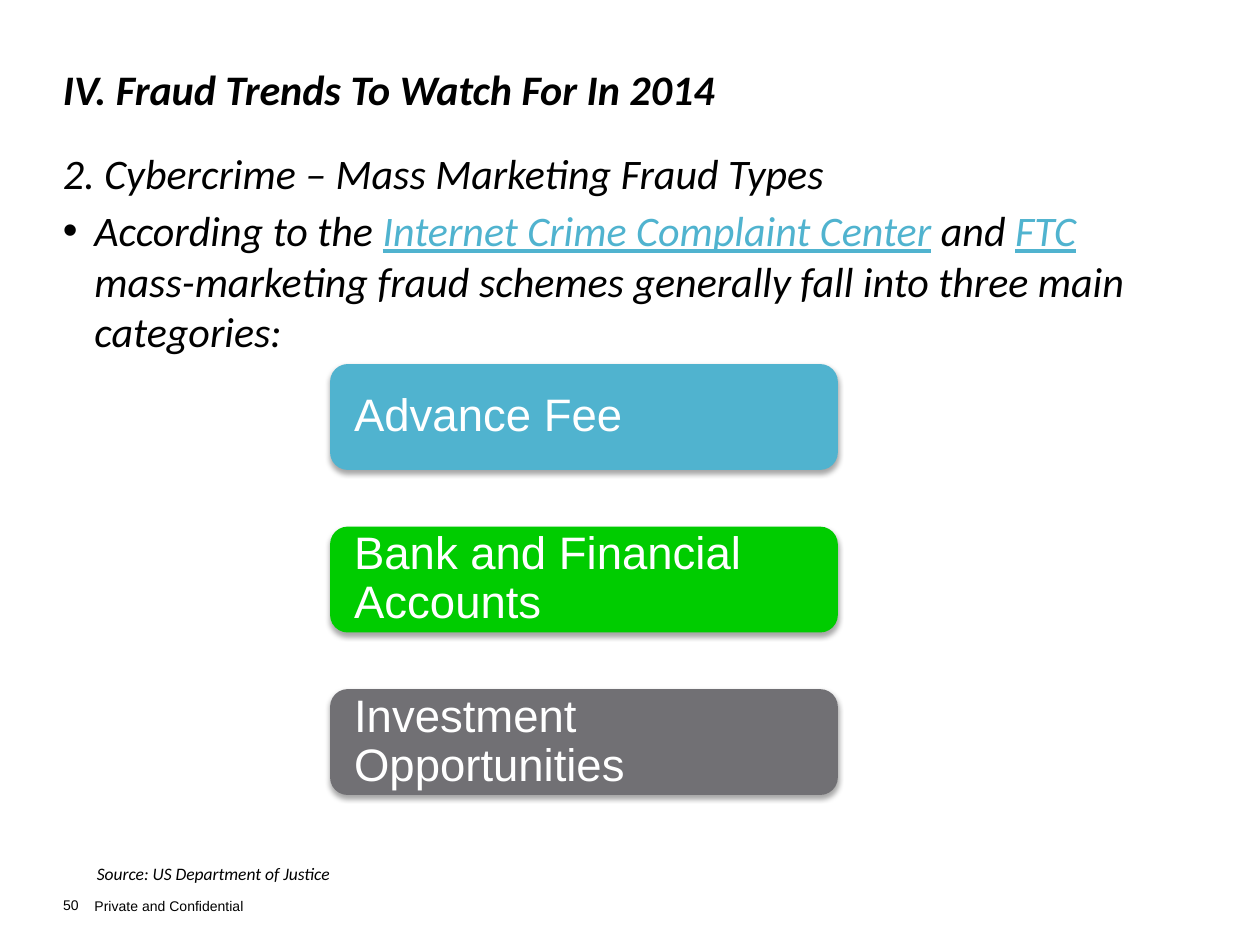
from dataclasses import dataclass, field

from lxml import etree
from pptx import Presentation
from pptx.dml.color import RGBColor
from pptx.enum.shapes import MSO_SHAPE
from pptx.enum.text import MSO_ANCHOR, PP_ALIGN
from pptx.oxml.ns import qn
from pptx.util import Emu, Inches, Pt

BLACK = RGBColor(0x00, 0x00, 0x00)
WHITE = RGBColor(0xFF, 0xFF, 0xFF)
TEAL = RGBColor(0x50, 0xB3, 0xCF)
GREEN = RGBColor(0x00, 0xCC, 0x00)
GRAY = RGBColor(0x71, 0x70, 0x74)

ROUNDED = MSO_SHAPE.ROUNDED_RECTANGLE
TOP, MIDDLE, BOTTOM = MSO_ANCHOR.TOP, MSO_ANCHOR.MIDDLE, MSO_ANCHOR.BOTTOM
LEFT = PP_ALIGN.LEFT

SLIDE_WIDTH, SLIDE_HEIGHT = Inches(10), Inches(7.5)
HEADING = {"name": "Calibri", "size": Pt(24), "bold": True, "italic": True}
BODY = {"name": "Calibri", "size": Pt(24), "italic": True}
SOURCE = {"name": "Calibri", "size": Pt(10), "italic": True}
FOOTER = {"name": "Arial", "size": Pt(8)}
CARD = {"name": "Arial", "size": Pt(26)}
FIRST_CARD_TOP, CARD_STEP = 38.53, 17.2


@dataclass
class Area:
    left: float
    top: float
    width: float
    height: float

    def box(self) -> tuple[Emu, Emu, Emu, Emu]:
        return (
            Emu(round(SLIDE_WIDTH * self.left / 100)),
            Emu(round(SLIDE_HEIGHT * self.top / 100)),
            Emu(round(SLIDE_WIDTH * self.width / 100)),
            Emu(round(SLIDE_HEIGHT * self.height / 100)),
        )


@dataclass
class Phrase:
    text: str
    linked: bool = False


@dataclass
class Line:
    phrases: list[Phrase]
    bulleted: bool = False


@dataclass
class Passage:
    area: Area
    lines: list[Line]
    style: dict
    anchor: MSO_ANCHOR = TOP
    wrap: bool = True
    margins: tuple[float, float] = (0, 0)


@dataclass
class Category:
    label: str
    color: RGBColor
    style: dict = field(default_factory=lambda: CARD)


def plain(text: str) -> list[Line]:
    return [Line([Phrase(text)])]


def apply(target, values: dict) -> None:
    for name, value in values.items():
        setattr(target, name, value)


def set_frame(frame, anchor: MSO_ANCHOR, wrap: bool, side: float, end: float) -> None:
    apply(frame, {
        "word_wrap": wrap,
        "vertical_anchor": anchor,
        "margin_left": Inches(side),
        "margin_right": Inches(side),
        "margin_top": Inches(end),
        "margin_bottom": Inches(end),
    })


def add_bullet(paragraph) -> None:
    properties = paragraph._p.get_or_add_pPr()
    properties.set("marL", str(Inches(0.25)))
    properties.set("indent", str(-Inches(0.25)))
    etree.SubElement(properties, qn("a:buFont"), typeface="Arial")
    etree.SubElement(properties, qn("a:buChar"), char="•")


def add_passage(slide, passage: Passage) -> None:
    frame = slide.shapes.add_textbox(*passage.area.box()).text_frame
    set_frame(frame, passage.anchor, passage.wrap, *passage.margins)
    for index, line in enumerate(passage.lines):
        paragraph = frame.add_paragraph() if index else frame.paragraphs[0]
        if index:
            paragraph.space_before = Pt(4)
        if line.bulleted:
            add_bullet(paragraph)
        for phrase in line.phrases:
            run = paragraph.add_run()
            run.text = phrase.text
            apply(run.font, passage.style)
            run.font.underline = phrase.linked
            run.font.color.rgb = TEAL if phrase.linked else BLACK


def add_soft_shadow(shape) -> None:
    shape.shadow.inherit = False
    effects = shape._element.spPr.find(qn("a:effectLst"))
    shadow = etree.SubElement(
        effects, qn("a:outerShdw"), blurRad=str(Pt(3.1)), dist=str(Pt(1.8)),
        dir="5400000", rotWithShape="0",
    )
    black = etree.SubElement(shadow, qn("a:srgbClr"), val=str(BLACK))
    etree.SubElement(black, qn("a:alpha"), val="35000")


def add_category(slide, category: Category, row: int) -> None:
    area = Area(26.2, FIRST_CARD_TOP + row * CARD_STEP, 40.3, 11.2)
    card = slide.shapes.add_shape(ROUNDED, *area.box())
    card.fill.solid()
    card.fill.fore_color.rgb = category.color
    card.line.fill.background()
    add_soft_shadow(card)
    set_frame(card.text_frame, MIDDLE, True, 0.15, 0)
    paragraph = card.text_frame.paragraphs[0]
    apply(paragraph, {"alignment": LEFT, "line_spacing": 0.9})
    run = paragraph.add_run()
    run.text = category.label
    apply(run.font, category.style)
    run.font.color.rgb = WHITE


PASSAGES = [
    Passage(Area(7.5, 94.93, 12, 1.87), plain("Private and Confidential"),
            FOOTER, BOTTOM, wrap=False),
    Passage(Area(5, 6.67, 90, 10), plain("IV. Fraud Trends To Watch For In 2014"),
            HEADING),
    Passage(Area(5, 15.6, 88.3, 30), [
        Line([Phrase("2. Cybercrime – Mass Marketing Fraud Types")]),
        Line([
            Phrase("According to the "),
            Phrase("Internet Crime Complaint Center", linked=True),
            Phrase(" and "),
            Phrase("FTC", linked=True),
            Phrase(" mass-marketing fraud schemes generally fall into "
                   "three main categories:"),
        ], bulleted=True),
    ], BODY),
    Passage(Area(5, 93.47, 3.1, 3.2), plain("50"), FOOTER, BOTTOM),
    Passage(Area(6.7, 90.67, 64.2, 3.6), plain("Source: US Department of Justice"),
            SOURCE, margins=(0.1, 0.05)),
]

CATEGORIES = [
    Category("Advance Fee", TEAL),
    Category("Bank and Financial Accounts", GREEN),
    Category("Investment Opportunities", GRAY),
]


def main() -> None:
    deck = Presentation()
    apply(deck, {"slide_width": SLIDE_WIDTH, "slide_height": SLIDE_HEIGHT})
    slide = deck.slides.add_slide(deck.slide_layouts[6])
    for passage in PASSAGES:
        add_passage(slide, passage)
    for row, category in enumerate(CATEGORIES):
        add_category(slide, category, row)
    deck.save("out.pptx")


if __name__ == "__main__":
    main()
